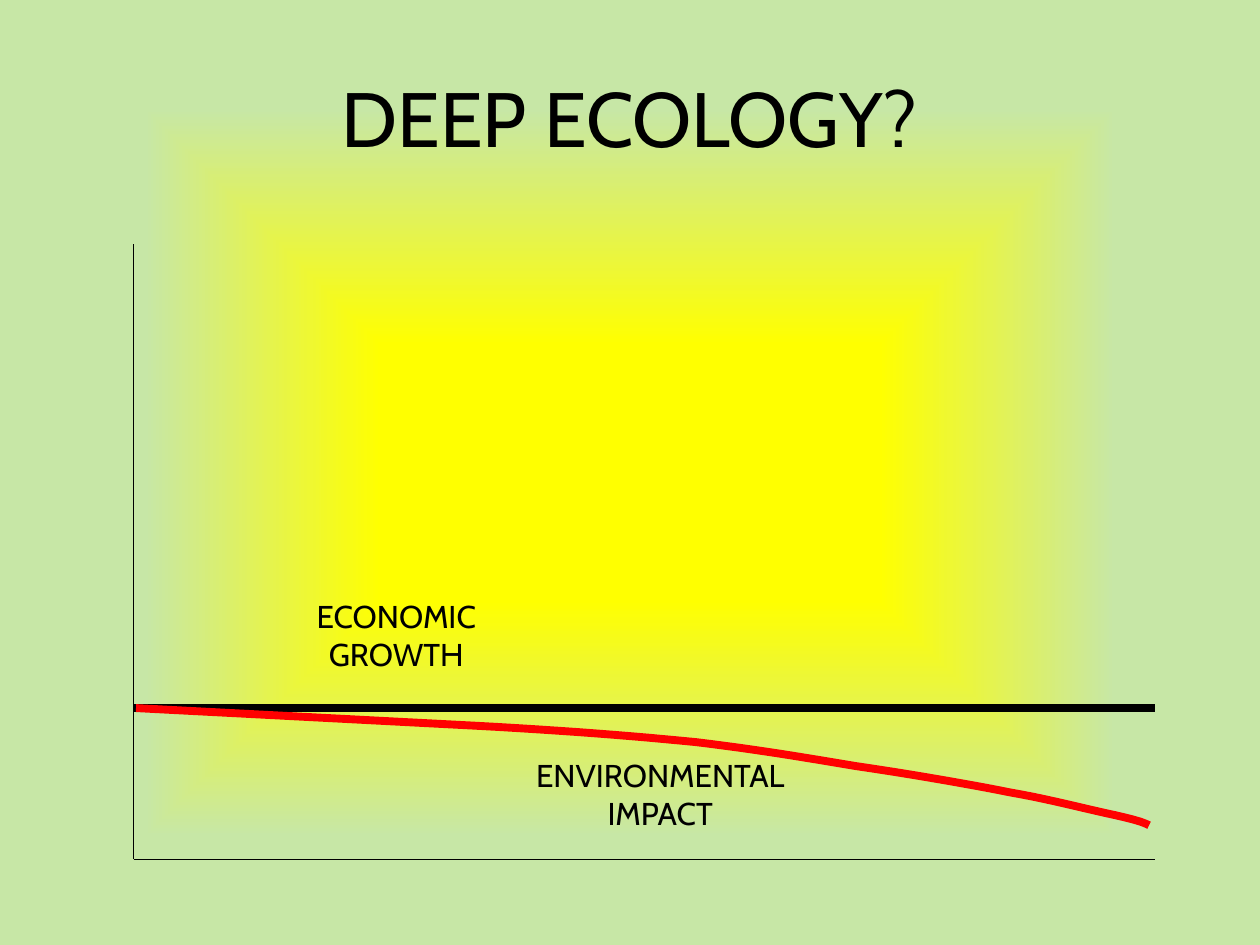
from pptx import Presentation
from pptx.dml.color import RGBColor
from pptx.enum.shapes import MSO_CONNECTOR
from pptx.enum.text import MSO_ANCHOR, MSO_AUTO_SIZE, PP_ALIGN
from pptx.oxml import parse_xml
from pptx.oxml.ns import nsdecls, qn
from pptx.util import Inches, Pt

FONT = "Cabin"
BLACK, RED = "000000", "FF0000"
LEFT, RIGHT, TOP, BASE, LEVEL = 1.06, 9.17, 1.94, 6.82, 5.62

TITLE = "DEEP ECOLOGY?"
# position, colour, opacity (percent)
GLOW = [(27, "FFFF00", 62), (77, "C7E7A6", 81)]
# start, end, width in points
LINES = [
    ((LEFT, TOP), (LEFT, BASE), 0.75),
    ((LEFT, BASE), (RIGHT, BASE), 0.75),
    ((LEFT, LEVEL), (RIGHT, LEVEL), 4.5),
]
# text, left, top, width, height
LABELS = [
    ("ECONOMIC GROWTH", 2.32, 4.69, 1.65, 0.71),
    ("ENVIRONMENTAL IMPACT", 3.9, 5.95, 2.68, 0.71),
]
# The impact line runs straight to its bend, then along Bezier curves
START, BEND = (1.08, LEVEL), (3.77, 5.76)
CURVES = [
    ((4.51, 5.8), (5.01, 5.84), (5.52, 5.89)),
    ((6.02, 5.95), (6.37, 6.01), (6.79, 6.08)),
    ((7.2, 6.14), (7.67, 6.22), (8.02, 6.29)),
    ((8.36, 6.35), (8.57, 6.41), (8.85, 6.47)),
    ((9.03, 6.51), (9.08, 6.53), (9.12, 6.55)),
]
STEPS = 12


def color(code):
    return RGBColor.from_string(code)


def write(shape, text, size):
    frame = shape.text_frame
    frame.word_wrap = True
    frame.text = text
    para = frame.paragraphs[0]
    para.alignment = PP_ALIGN.CENTER
    font = para.runs[0].font
    font.name, font.size = FONT, Pt(size)
    font.color.rgb = color(BLACK)


def set_line(shape, code, width):
    shape.line.color.rgb = color(code)
    shape.line.width = Pt(width)


def paint_glow(slide):
    """Fill the background with a rectangular gradient from its centre."""
    slide.background.fill.gradient()
    old = slide.element.find(".//" + qn("a:gradFill"))
    stops = "".join(
        f'<a:gs pos="{pos * 1000}"><a:srgbClr val="{code}">'
        f'<a:alpha val="{alpha * 1000}"/></a:srgbClr></a:gs>'
        for pos, code, alpha in GLOW
    )
    new = parse_xml(
        f'<a:gradFill {nsdecls("a")} rotWithShape="1"><a:gsLst>{stops}</a:gsLst>'
        '<a:path path="shape"><a:fillToRect l="50000" t="50000" r="50000" b="50000"/>'
        "</a:path></a:gradFill>"
    )
    old.getparent().replace(old, new)


def bezier(ends, t):
    """Point at t on the cubic curve through four control points."""
    u = 1 - t
    parts = (u ** 3, 3 * u * u * t, 3 * u * t * t, t ** 3)
    return tuple(sum(w * p[i] for w, p in zip(parts, ends)) for i in (0, 1))


def trace():
    points = [START, BEND]
    for curve in CURVES:
        ends = (points[-1], *curve)
        points += [bezier(ends, n / STEPS) for n in range(1, STEPS + 1)]
    return [(Inches(x), Inches(y)) for x, y in points]


def main():
    deck = Presentation()
    deck.slide_width, deck.slide_height = Inches(10), Inches(7.5)
    slide = deck.slides.add_slide(deck.slide_layouts[5])
    shapes = slide.shapes
    paint_glow(slide)

    title = shapes.title
    title.left, title.top = Inches(0.5), Inches(0.3)
    title.width, title.height = Inches(9), Inches(1.25)
    write(title, TITLE, 44)
    title.text_frame.vertical_anchor = MSO_ANCHOR.MIDDLE

    for start, end, width in LINES:
        line = shapes.add_connector(
            MSO_CONNECTOR.STRAIGHT, *(Inches(v) for v in start + end)
        )
        set_line(line, BLACK, width)
        line.element.spPr.append(parse_xml(f'<a:effectLst {nsdecls("a")}/>'))

    for text, *box in LABELS:
        label = shapes.add_textbox(*(Inches(v) for v in box))
        write(label, text, 18)
        label.text_frame.auto_size = MSO_AUTO_SIZE.SHAPE_TO_FIT_TEXT

    first, *rest = trace()
    builder = shapes.build_freeform(*first)
    builder.add_line_segments(rest, close=False)
    impact = builder.convert_to_shape()
    impact.shadow.inherit = False
    impact.fill.background()
    set_line(impact, RED, 4.5)

    deck.save("out.pptx")


if __name__ == "__main__":
    main()
